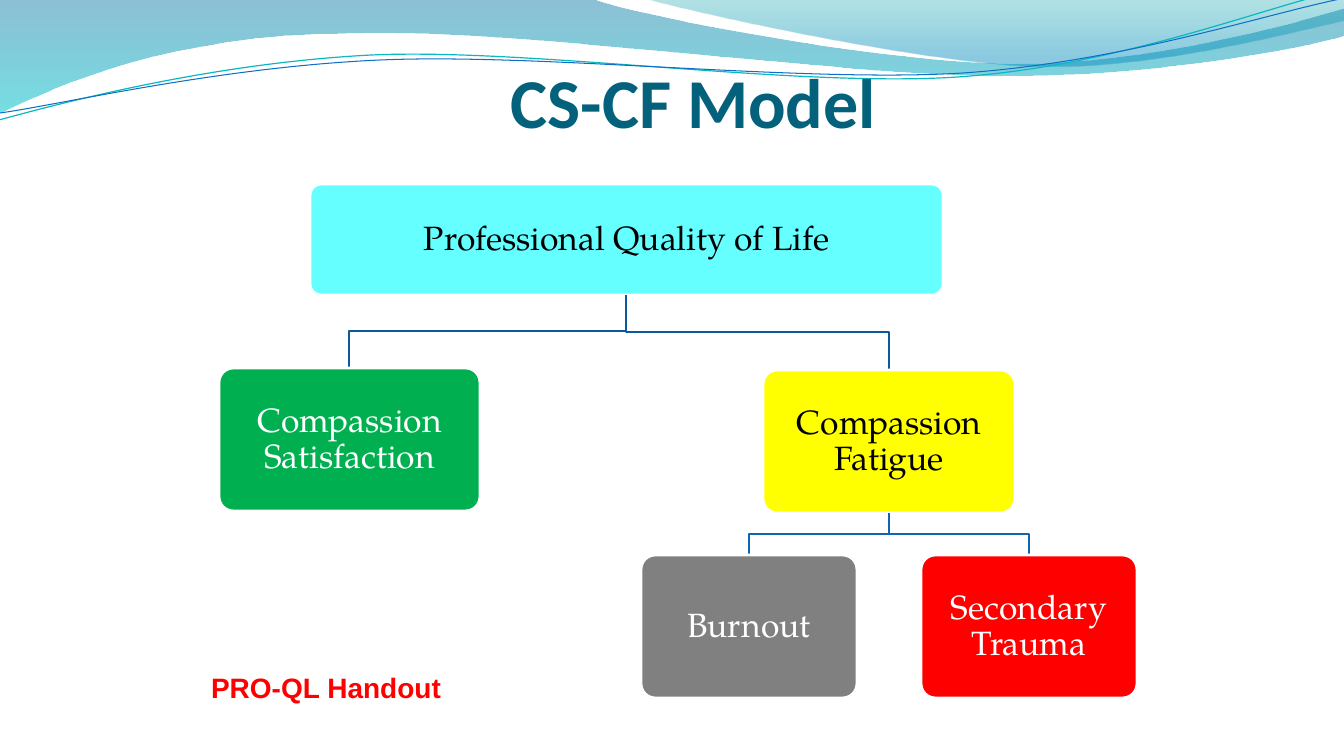
"""Build the CS-CF Model slide: a hierarchy of boxes under a wave header."""
import pptx
import pptx.dml.color
import pptx.enum.shapes
import pptx.enum.text
import pptx.oxml.ns
import pptx.util
from lxml import etree

PX = 914400 / 100.8
COLORS = {
    "white": "FFFFFF", "black": "000000", "title": "04617B", "aqua": "66FFFF",
    "green": "00B050", "yellow": "FFFF00", "gray": "808080", "red": "FF0000",
    "upper link": "0C599F", "lower link": "0E65B4",
    "teal wave": "0AB8BF", "blue wave": "0F6FC6",
    "band top": "0074A1", "band bottom": "00C6CF",
    "crest top": "00A1A9", "crest bottom": "008BBF",
}
RGB = {name: pptx.dml.color.RGBColor.from_string(value) for name, value in COLORS.items()}
ALIGN = pptx.enum.text.PP_ALIGN
ANCHOR = pptx.enum.text.MSO_ANCHOR

presentation = pptx.Presentation()
presentation.slide_width = round(1344 * PX)
presentation.slide_height = round(756 * PX)
slide = presentation.slides.add_slide(presentation.slide_layouts[6])


def draw_outline(start, segments, close=False):
    """Draw lines (x, y) and cubic curves (x1, y1, x2, y2, x, y) from start."""
    points = [segment[i:i + 2] for segment in segments for i in range(0, len(segment), 2)]
    builder = slide.shapes.build_freeform(*start, scale=PX)
    builder.add_line_segments(points, close=close)
    shape = builder.convert_to_shape()
    lines = iter(list(shape.element.spPr.iter(pptx.oxml.ns.qn("a:lnTo"))))
    for segment in segments:
        steps = [next(lines) for _ in range(len(segment) // 2)]
        if len(steps) == 3:
            curve = etree.Element(pptx.oxml.ns.qn("a:cubicBezTo"))
            steps[0].addprevious(curve)
            for step in steps:
                curve.append(step[0])
                step.getparent().remove(step)
    shape.shadow.inherit = False
    shape.fill.background()
    shape.line.fill.background()
    return shape


def write_text(shape, text, color, margins, anchor, paragraph_format, font_format):
    """Put one formatted paragraph into a shape."""
    frame = shape.text_frame
    frame.word_wrap = True
    frame.vertical_anchor = anchor
    for side, margin in zip(("left", "top", "right", "bottom"), margins):
        setattr(frame, f"margin_{side}", round(margin * PX))
    paragraph = frame.paragraphs[0]
    run = paragraph.add_run()
    run.text = text
    for name, value in paragraph_format.items():
        setattr(paragraph, name, value)
    for name, value in font_format.items():
        setattr(run.font, name, value)
    run.font.color.rgb = RGB[color]


filled_waves = [
    ((0, -1),
     [(592, -1), (639, 17, 892, 64, 1019, 64), (1147, 64, 1288, 26, 1344, 9),
      (1346, 36), (1321, 44, 1169, 77, 1002, 76), (836, 76, 513, 28, 346, 34),
      (173, 35, 61, 84, -1, 114), (0, -1)],
     [("band top", 0, 45), ("band bottom", 1, 55)]),
    ((644, -1),
     [(684, 11, 916, 62, 1033, 66), (1150, 70, 1292, 32, 1344, 21), (1344, 0), (644, -1)],
     [("crest top", 0, 30), ("crest bottom", 0.8, 45)]),
]
for start, segments, stops in filled_waves:
    wave = draw_outline(start, segments, close=True)
    wave.fill.gradient()
    wave.fill.gradient_angle = 270
    for stop, (color, position, _) in zip(wave.fill.gradient_stops, stops):
        stop.color.rgb = RGB[color]
        stop.position = position
    color_elements = wave.element.spPr.iter(pptx.oxml.ns.qn("a:srgbClr"))
    for element, (_, _, opacity) in zip(color_elements, stops):
        alpha = etree.SubElement(element, pptx.oxml.ns.qn("a:alpha"))
        alpha.set("val", str(opacity * 1000))

wave_lines = [
    ("teal wave", 0.85, (-1, 120),
     [(65, 102, 213, 63, 372, 55), (531, 48, 796, 88, 958, 77),
      (1119, 66, 1262, 8, 1342, -10)]),
    ("blue wave", 0.75, (0, 113),
     [(64, 104, 220, 67, 381, 60), (541, 53, 802, 83, 963, 73),
      (1124, 62, 1265, 14, 1345, -2)]),
]
for color, width, start, segments in wave_lines:
    wave = draw_outline(start, segments)
    wave.line.color.rgb = RGB[color]
    wave.line.width = pptx.util.Pt(width)

labels = [
    ("CS-CF Model", (236, 42, 915, 101), "title", (0, 5, 0, 0), ANCHOR.BOTTOM,
     {"alignment": ALIGN.CENTER},
     {"name": "Calibri", "size": pptx.util.Pt(50), "bold": True}),
    ("PRO-QL Handout", (201, 665, 320, 44), "red", (10, 5, 10, 5), ANCHOR.TOP,
     {"alignment": ALIGN.LEFT},
     {"name": "Arial", "size": pptx.util.Pt(20), "bold": True}),
]
for text, bounds, *text_format in labels:
    label = slide.shapes.add_textbox(*(round(length * PX) for length in bounds))
    write_text(label, text, *text_format)

boxes = {
    "Professional Quality of Life": ((310, 184, 633, 111), "aqua", "black", None, None),
    "Compassion Satisfaction": ((219, 368, 261, 143), "green", "white",
                                "Professional Quality of Life", "upper link"),
    "Compassion Fatigue": ((763, 370, 252, 143), "yellow", "black",
                           "Professional Quality of Life", "upper link"),
    "Burnout": ((641, 555, 216, 143), "gray", "white",
                "Compassion Fatigue", "lower link"),
    "Secondary Trauma": ((921, 555, 216, 143), "red", "white",
                         "Compassion Fatigue", "lower link"),
}
box_paragraph = {"alignment": ALIGN.CENTER, "line_spacing": 0.9}
box_font = {"name": "TeX Gyre Pagella", "size": pptx.util.Pt(24)}
for text, (bounds, fill, text_color, parent, link_color) in boxes.items():
    left, top, width, height = bounds
    if parent:
        parent_left, parent_top, parent_width, parent_height = boxes[parent][0]
        parent_center = parent_left + parent_width // 2
        parent_bottom = parent_top + parent_height
        center = left + width // 2
        middle = (parent_bottom + top) // 2
        link = draw_outline((parent_center, parent_bottom),
                            [(parent_center, middle), (center, middle), (center, top)])
        link.line.color.rgb = RGB[link_color]
        link.line.width = pptx.util.Pt(2)
    box = slide.shapes.add_shape(pptx.enum.shapes.MSO_SHAPE.ROUNDED_RECTANGLE,
                                 *(round(length * PX) for length in bounds))
    box.adjustments[0] = 0.1
    box.shadow.inherit = False
    box.fill.solid()
    box.fill.fore_color.rgb = RGB[fill]
    box.line.color.rgb = RGB["white"]
    box.line.width = pptx.util.Pt(2)
    write_text(box, text, text_color, (10, 10, 10, 10), ANCHOR.MIDDLE,
               box_paragraph, box_font)

presentation.save("out.pptx")
